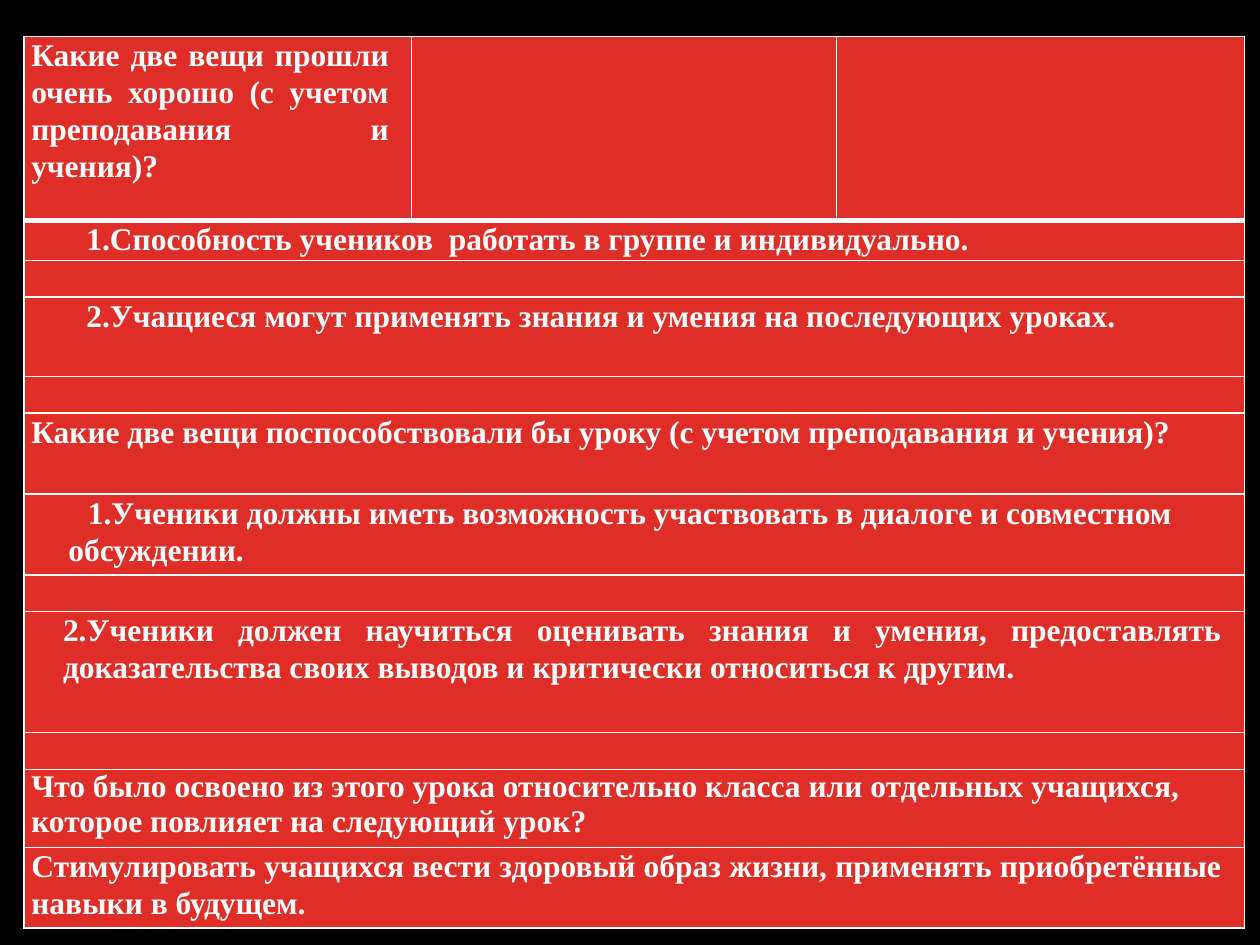
from dataclasses import dataclass

from lxml.etree import SubElement
from pptx import Presentation
from pptx.dml.color import RGBColor
from pptx.enum.text import MSO_ANCHOR, PP_ALIGN as Align
from pptx.oxml.ns import qn
from pptx.util import Cm, Pt

FONT = "Times New Roman"
WHITE, RED, BLACK = "FFFFFF", "DF2E28", "000000"
COLUMN_WIDTHS = (7.82, 8.56, 8.23)


@dataclass(frozen=True)
class ReflectionRow:
    """One table row; lengths in centimetres."""
    height: float
    text: str = ""
    left: float = 0
    first_line: float = 0
    align: Align = Align.JUSTIFY
    line_spacing: float = 1.06
    bottom_border: float = 1
    merged: bool = True


GAP = ReflectionRow(0.74)
REFLECTION = (
    ReflectionRow(3.7, "Какие две вещи прошли очень хорошо (с учетом преподавания и учения)?",
                  bottom_border=3, merged=False),
    ReflectionRow(0.81, "1.Способность учеников  работать в группе и индивидуально.",
                  first_line=1.11),
    GAP,
    ReflectionRow(1.6, "2.Учащиеся могут применять знания и умения на последующих уроках.",
                  first_line=1.11),
    GAP,
    ReflectionRow(1.63, "Какие две вещи поспособствовали бы уроку (с учетом преподавания и учения)?"),
    ReflectionRow(1.63, "1.Ученики должны иметь возможность участвовать в диалоге и совместном "
                  "обсуждении.", left=0.75, first_line=0.39, align=Align.LEFT),
    GAP,
    ReflectionRow(2.44, "2.Ученики должен научиться оценивать знания и умения, предоставлять "
                  "доказательства своих выводов и критически относиться к другим.", left=0.64),
    GAP,
    ReflectionRow(1.57, "Что было освоено из этого урока относительно класса или отдельных "
                  "учащихся, которое повлияет на следующий урок?",
                  align=Align.LEFT, line_spacing=1),
    ReflectionRow(1.63, "Стимулировать учащихся вести здоровый образ жизни, применять "
                  "приобретённые навыки в будущем."),
)


def paint(fill, color: str) -> None:
    fill.solid()
    fill.fore_color.rgb = RGBColor.from_string(color)


def set_borders(cell, top: float, bottom: float) -> None:
    properties = cell._tc.get_or_add_tcPr()
    for side, width in (("L", 1), ("R", 1), ("T", top), ("B", bottom)):
        line = SubElement(properties, qn(f"a:ln{side}"), w=str(Pt(width)))
        SubElement(SubElement(line, qn("a:solidFill")), qn("a:srgbClr"), val=WHITE)


def format_cell(cell, top: float, bottom: float) -> None:
    set_borders(cell, top, bottom)
    paint(cell.fill, RED)
    cell.margin_left, cell.margin_right = Cm(0.15), Cm(0.46)
    cell.margin_top = cell.margin_bottom = 0
    cell.vertical_anchor = MSO_ANCHOR.TOP


def write_text(cell, row: ReflectionRow) -> None:
    paragraph = cell.text_frame.paragraphs[0]
    paragraph.alignment = row.align
    paragraph.line_spacing = row.line_spacing
    properties = paragraph._p.get_or_add_pPr()
    properties.set("marL", str(Cm(row.left)))
    properties.set("indent", str(Cm(row.first_line)))
    run = paragraph.add_run()
    run.text = row.text
    run.font.name, run.font.size, run.font.bold = FONT, Pt(18), True
    run.font.color.rgb = RGBColor.from_string(WHITE)


def shrink_empty(cell) -> None:
    """Keep an empty cell from stretching its row."""
    SubElement(cell.text_frame.paragraphs[0]._p, qn("a:endParaRPr"), sz="1200")


def draw_reflection(slide) -> None:
    table = slide.shapes.add_table(
        len(REFLECTION), len(COLUMN_WIDTHS), Cm(0.48), Cm(0.74),
        Cm(sum(COLUMN_WIDTHS)), Cm(sum(row.height for row in REFLECTION))).table
    table.horz_banding = False
    for column, width in zip(table.columns, COLUMN_WIDTHS):
        column.width = Cm(width)
    top_border = 1
    for index, row in enumerate(REFLECTION):
        table.rows[index].height = Cm(row.height)
        cells = list(table.rows[index].cells)
        for cell in cells:
            format_cell(cell, top_border, row.bottom_border)
        if row.merged:
            cells[0].merge(cells[-1])
        for position, cell in enumerate(cells):
            if row.text and position == 0:
                write_text(cell, row)
            else:
                shrink_empty(cell)
        top_border = row.bottom_border


def main() -> None:
    deck = Presentation()
    deck.slide_width, deck.slide_height = Cm(25.4), Cm(19.05)
    slide = deck.slides.add_slide(deck.slide_layouts[6])
    paint(slide.background.fill, BLACK)
    draw_reflection(slide)
    deck.save("out.pptx")


if __name__ == "__main__":
    main()
